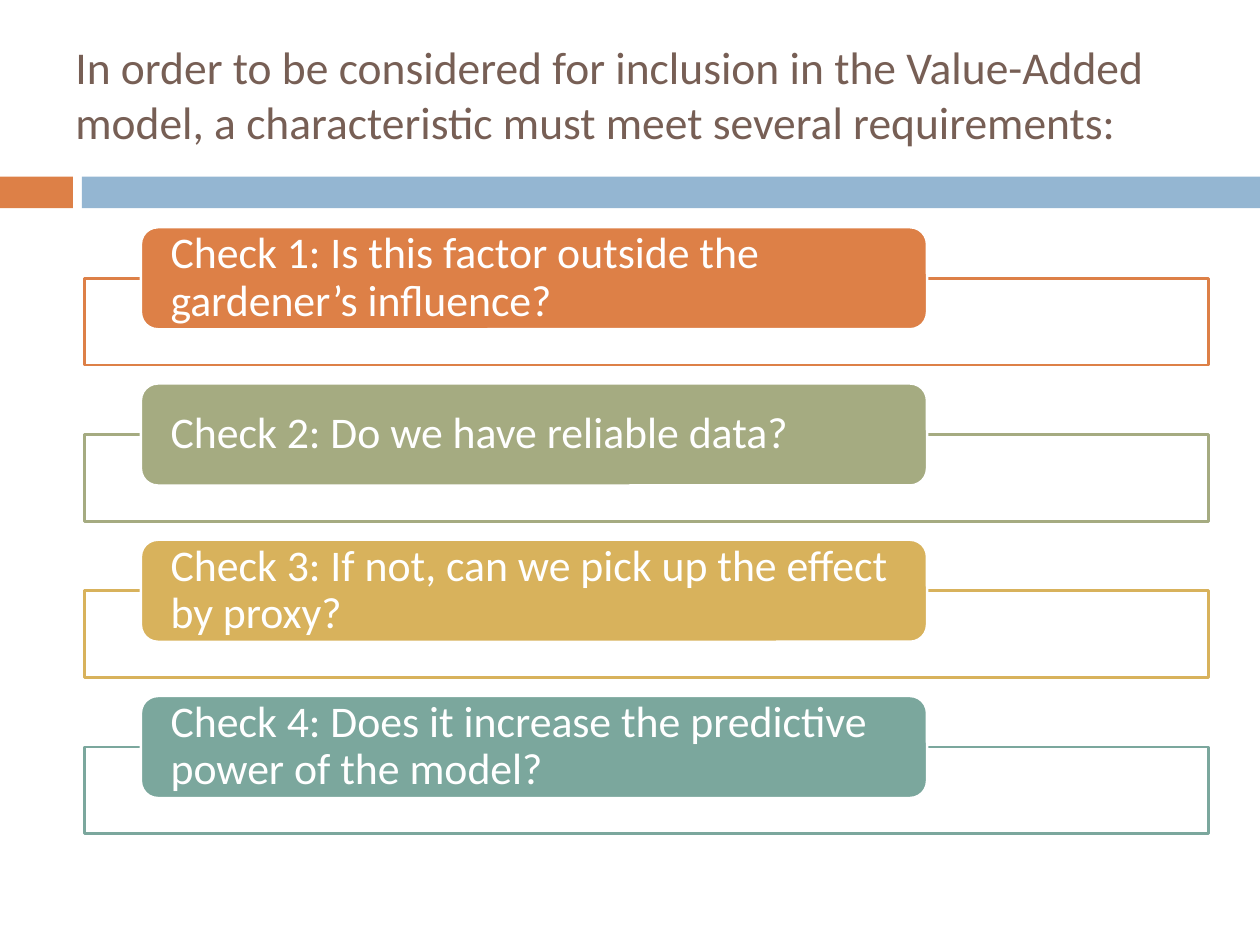
from dataclasses import dataclass

from lxml import etree
from pptx import Presentation
from pptx.dml.color import RGBColor
from pptx.enum.shapes import MSO_SHAPE
from pptx.enum.text import MSO_ANCHOR, PP_ALIGN
from pptx.oxml.ns import qn
from pptx.util import Cm, Pt

RECT = MSO_SHAPE.RECTANGLE
ROUND = MSO_SHAPE.ROUNDED_RECTANGLE
MIDDLE = MSO_ANCHOR.MIDDLE
LEFT = PP_ALIGN.LEFT


@dataclass(frozen=True)
class Theme:
    font: str = "Calibri"
    title: str = "775F55"
    white: str = "FFFFFF"
    orange: str = "DD8047"
    blue: str = "94B6D2"
    green: str = "A5AB81"
    gold: str = "D8B25C"
    teal: str = "7BA79D"
    head: float = 26
    body: float = 25
    edge: float = 1.5


theme = Theme()
deck = Presentation()
deck.slide_width, deck.slide_height = Cm(25.4), Cm(19.05)
slide = deck.slides.add_slide(deck.slide_layouts[6])


def add_box(kind, box, fill, line=None):
    shape = slide.shapes.add_shape(kind, *map(Cm, box))
    shape.shadow.inherit = False
    shape.fill.solid()
    shape.fill.fore_color.rgb = RGBColor.from_string(fill)
    if line:
        shape.line.color.rgb = RGBColor.from_string(line)
        shape.line.width = Pt(theme.edge)
    else:
        shape.line.fill.background()
    return shape


def set_text(shape, text, size, color):
    frame = shape.text_frame
    frame.word_wrap = True
    frame.vertical_anchor = MIDDLE
    para = frame.paragraphs[0]
    para.text = text
    para.alignment = LEFT
    para.font.name = theme.font
    para.font.size = Pt(size)
    para.font.color.rgb = RGBColor.from_string(color)
    return frame


# Title and divider band
add_box(RECT, (0, 3.56, 1.47, 0.64), theme.orange)
add_box(RECT, (1.65, 3.56, 23.75, 0.64), theme.blue)
title = slide.shapes.add_textbox(Cm(1.27), Cm(0.3), Cm(22.86), Cm(3.18))
set_text(
    title,
    "In order to be considered for inclusion in the Value-Added model, "
    "a characteristic must meet several requirements:",
    theme.head,
    theme.title,
)

# Checks: a label overlapping the top edge of an outlined panel
checks = [
    ("Check 1: Is this factor outside the gardener’s influence?", theme.orange),
    ("Check 2: Do we have reliable data?", theme.green),
    ("Check 3: If not, can we pick up the effect by proxy?", theme.gold),
    ("Check 4: Does it increase the predictive power of the model?", theme.teal),
]
for row, (text, color) in enumerate(checks):
    top = 4.58 + 3.15 * row
    panel = add_box(RECT, (1.7, top + 1.03, 22.66, 1.75), theme.white, color)
    tint = panel.fill._xPr.find(qn("a:solidFill"))[0]
    etree.SubElement(tint, qn("a:alpha"), val="90000")

    label = add_box(ROUND, (2.84, top, 15.85, 2.06), color, theme.white)
    frame = set_text(label, text, theme.body, theme.white)
    frame.margin_left = frame.margin_right = Cm(0.5)
    frame.margin_top = frame.margin_bottom = 0
    frame.paragraphs[0].line_spacing = 0.9

deck.save("out.pptx")
